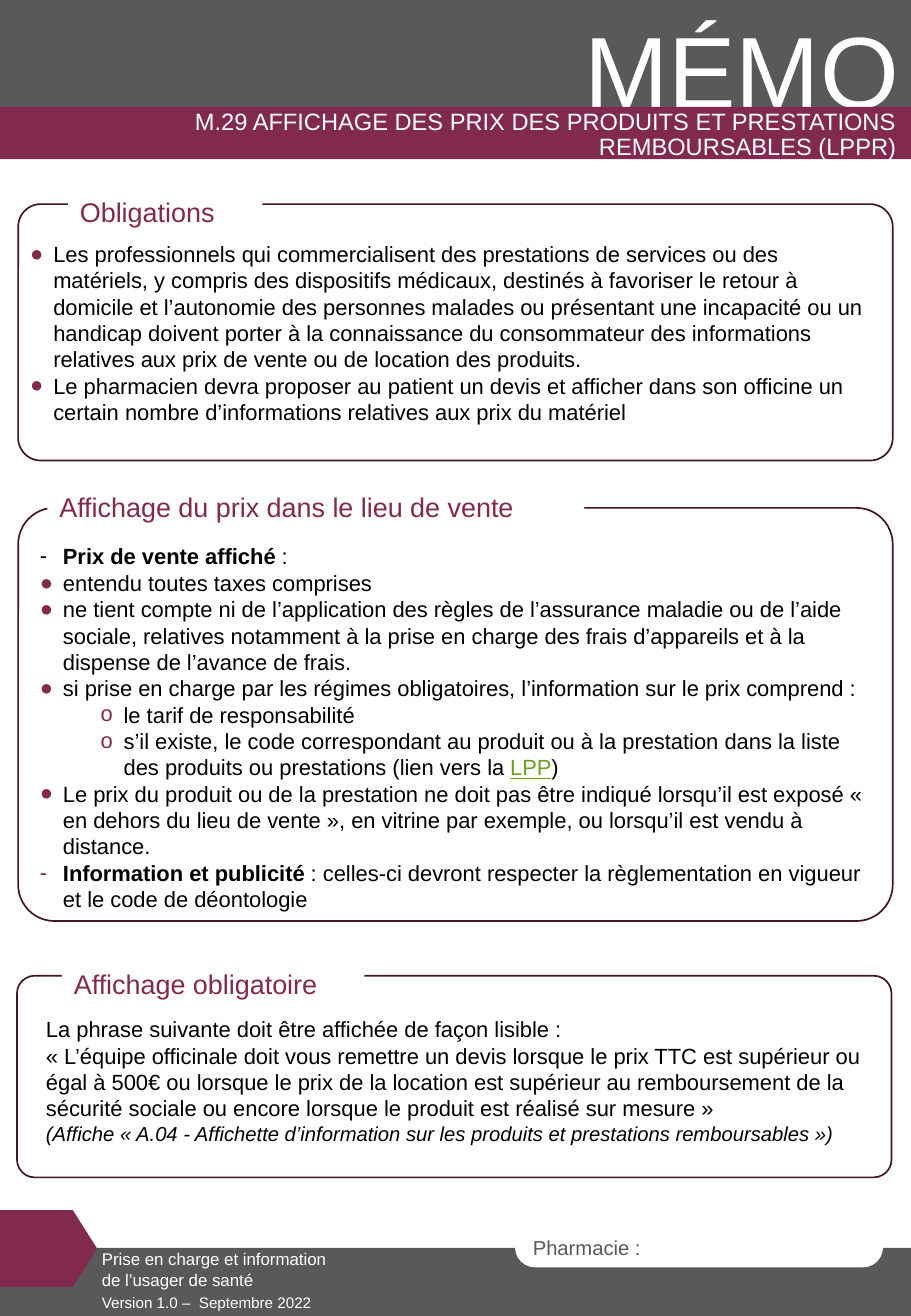
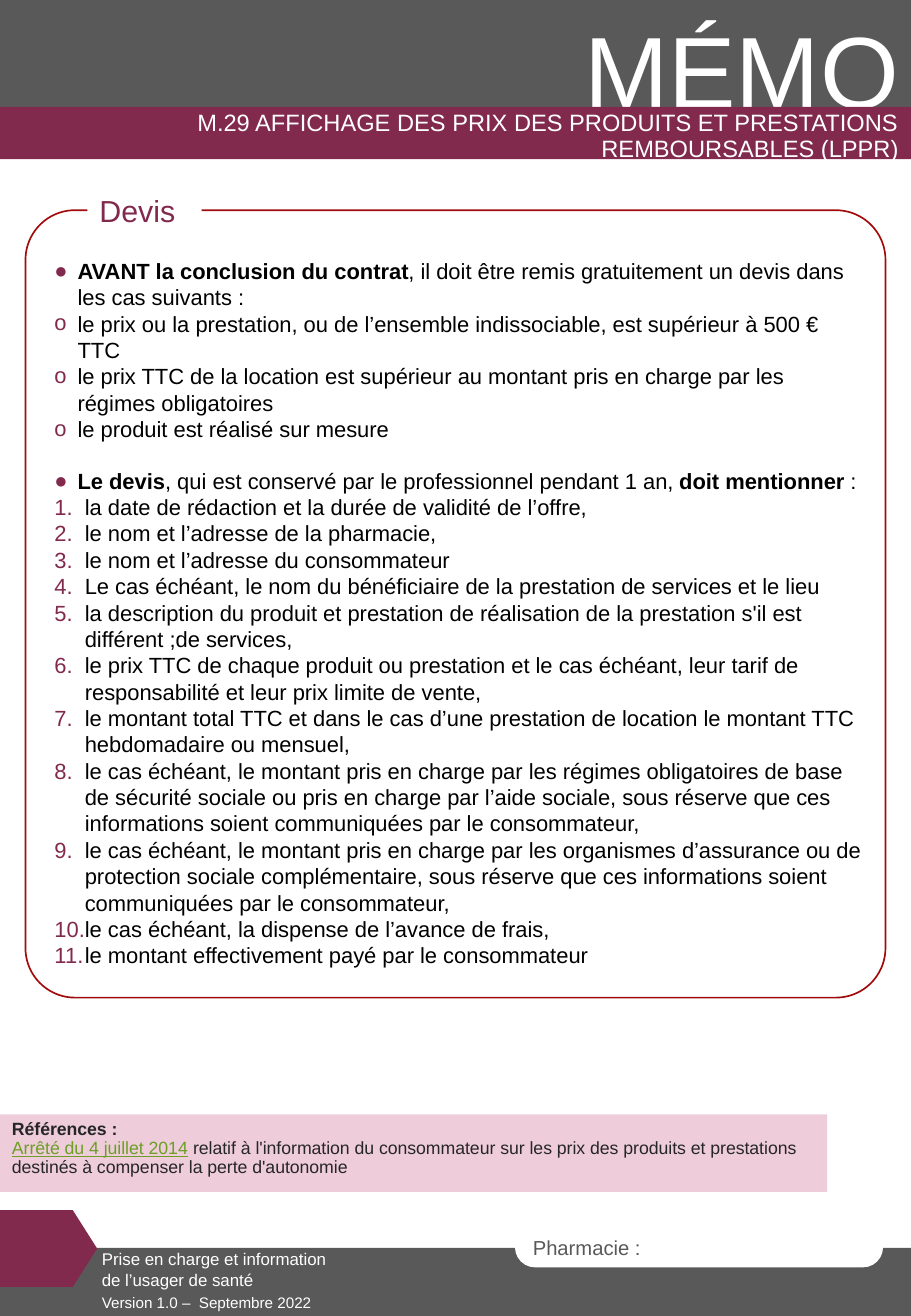
from lxml import etree
from pptx import Presentation
from pptx.dml.color import RGBColor
from pptx.enum import shapes, text
from pptx.oxml import ns
from pptx.util import Inches, Pt

PLUM = RGBColor(0x81, 0x2A, 0x4D)
DARK_PLUM = RGBColor(0x40, 0x15, 0x27)
RED = RGBColor(0xA1, 0x0B, 0x0B)
PINK = RGBColor(0xEE, 0xCC, 0xDA)
GREY = RGBColor(0x59, 0x59, 0x59)
INK = RGBColor(0x26, 0x26, 0x26)
GREEN = RGBColor(0x6B, 0x9F, 0x25)
BLACK = RGBColor(0, 0, 0)
WHITE = RGBColor(0xFF, 0xFF, 0xFF)

FONT = "Arial"
TITLE = "M.29 AFFICHAGE DES PRIX DES PRODUITS ET PRESTATIONS REMBOURSABLES (LPPR)"
RECT = shapes.MSO_SHAPE.RECTANGLE
ROUNDED = shapes.MSO_SHAPE.ROUNDED_RECTANGLE
PENTAGON = shapes.MSO_SHAPE.PENTAGON
RIGHT = text.PP_ALIGN.RIGHT

# List style: bullet tag, its attributes, left margin, hanging indent, bullet colour
LISTS = {
    "dot": ("buChar", {"char": "●"}, 0.19, 0.19, PLUM),
    "dash": ("buChar", {"char": "-"}, 0.19, 0.19, PLUM),
    "black dash": ("buChar", {"char": "-"}, 0.19, 0.19, BLACK),
    "ring": ("buChar", {"char": "o"}, 0.19, 0.19, PLUM),
    "inner ring": ("buChar", {"char": "o"}, 0.69, 0.19, PLUM),
    "number": ("buAutoNum", {"type": "arabicPeriod"}, 0.25, 0.25, PLUM),
}


def add_box(page, preset, at, fill=None, line=None, adjust=None):
    """Add a preset shape, or a text box when preset is None."""
    place = [Inches(length) for length in at]
    if preset is None:
        return page.shapes.add_textbox(*place)
    box = page.shapes.add_shape(preset, *place)
    box.shadow.inherit = False
    if adjust is not None:
        box.adjustments[0] = adjust
    if fill is None:
        box.fill.background()
    else:
        box.fill.solid()
        box.fill.fore_color.rgb = fill
    if line is None:
        box.line.fill.background()
    else:
        box.line.color.rgb = line
        box.line.width = Pt(1)
    return box


def write(box, paras, size, colour, align=text.PP_ALIGN.LEFT, spacing=None,
          anchor=text.MSO_ANCHOR.TOP, wrap=True):
    """Fill a box; a para is (list style, runs, gap before), a run is (text, marks).

    Marks: b bold, i italic at 12 points, u underlined green.
    """
    frame = box.text_frame
    frame.word_wrap = wrap
    frame.auto_size = text.MSO_AUTO_SIZE.NONE
    frame.vertical_anchor = anchor
    for index, (style, runs, gap) in enumerate(paras):
        para = frame.paragraphs[0] if index == 0 else frame.add_paragraph()
        if style:
            tag, attributes, margin, hanging, bullet_colour = LISTS[style]
            props = para._p.get_or_add_pPr()
            props.set("marL", str(Inches(margin)))
            props.set("indent", str(-Inches(hanging)))
            tint = etree.SubElement(props, ns.qn("a:buClr"))
            etree.SubElement(tint, ns.qn("a:srgbClr"), val=str(bullet_colour))
            etree.SubElement(props, ns.qn("a:buFont"), typeface=FONT)
            etree.SubElement(props, ns.qn("a:" + tag), attributes)
        para.alignment = align
        if spacing:
            para.line_spacing = spacing
        if gap:
            para.space_before = Pt(gap)
        for words, marks in runs:
            span = para.add_run()
            span.text = words
            span.font.name = FONT
            span.font.size = Pt(12 if "i" in marks else size)
            span.font.color.rgb = GREEN if "u" in marks else colour
            span.font.bold = "b" in marks
            span.font.italic = "i" in marks
            span.font.underline = "u" in marks


deck = Presentation()
deck.slide_width = Inches(7.5)
deck.slide_height = Inches(10.83)
layout = deck.slide_layouts[5]
for holder in list(layout.placeholders):
    if holder.placeholder_format.type != shapes.PP_PLACEHOLDER.TITLE:
        holder.element.getparent().remove(holder.element)
pages = [deck.slides.add_slide(layout) for _ in range(2)]

# Bands and footer: drawn once, then moved to the layout
first = pages[0]
header = add_box(first, RECT, (0, 0, 7.5, 0.88), GREY)
memo = add_box(first, None, (4.63, 0.01, 2.87, 1.11))
write(memo, [(None, [("MÉMO", "")], 0)], 60, WHITE, align=RIGHT, wrap=False)
title_band = add_box(first, RECT, (0, 0.88, 7.5, 0.43), PLUM)
footer = add_box(first, RECT, (0, 10.27, 7.5, 0.56), GREY)
pharmacy = add_box(first, ROUNDED, (4.24, 10.1, 3.03, 0.33), WHITE, adjust=0.5)
write(pharmacy, [(None, [("Pharmacie :", "")], 0)], 12, GREY,
      anchor=text.MSO_ANCHOR.MIDDLE)
arrow = add_box(first, PENTAGON, (0, 9.96, 0.8, 0.63), PLUM, adjust=0.317)
theme = add_box(first, None, (0.74, 10.23, 2.23, 0.43))
write(theme, [(None, [("Prise en charge et information de l’usager de santé", "")], 0)],
      10, WHITE)
version = add_box(first, None, (0.74, 10.59, 5.88, 0.25))
write(version, [(None, [("Version 1.0 –  Septembre 2022", "")], 0)], 9, WHITE)
for part in (header, memo, title_band, footer, pharmacy, arrow, theme, version):
    layout.shapes.element.append(part.element)

for page, top, width in zip(pages, (0.85, 0.86), (7.48, 7.5)):
    title = page.shapes.title
    title.left, title.top = Inches(0), Inches(top)
    title.width, title.height = Inches(width), Inches(0.53)
    write(title, [(None, [(TITLE, "")], 0)], 14, WHITE, align=RIGHT, spacing=0.9,
          anchor=text.MSO_ANCHOR.MIDDLE)

obligations = [
    ("dot", [("Les professionnels qui commercialisent des prestations de services ou des "
              "matériels, y compris des dispositifs médicaux, destinés à favoriser le "
              "retour à domicile et l’autonomie des personnes malades ou présentant une "
              "incapacité ou un handicap doivent porter à la connaissance du consommateur "
              "des informations relatives aux prix de vente ou de location des produits.",
              "")], 0),
    ("dot", [("Le pharmacien devra proposer au patient un devis et afficher dans son "
              "officine un certain nombre d’informations relatives aux prix du matériel",
              "")], 0),
]
price_display = [
    ("black dash", [("Prix de vente affiché ", "b"), (":", "")], 0),
    ("dot", [("entendu toutes taxes comprises", "")], 0),
    ("dot", [("ne tient compte ni de l’application des règles de l’assurance maladie ou "
              "de l’aide sociale, relatives notamment à la prise en charge des frais "
              "d’appareils et à la dispense de l’avance de frais.", "")], 0),
    ("dot", [("si prise en charge par les régimes obligatoires, l’information sur le prix "
              "comprend :", "")], 0),
    ("inner ring", [("le tarif de responsabilité", "")], 0),
    ("inner ring", [("s’il existe, le code correspondant au produit ou à la prestation "
                     "dans la liste des produits ou prestations (lien vers la ", ""),
                    ("LPP", "u"), (")", "")], 0),
    ("dot", [("Le prix du produit ou de la prestation ne doit pas être indiqué lorsqu’il "
              "est exposé « en dehors du lieu de vente », en vitrine par exemple, ou "
              "lorsqu’il est vendu à distance.", "")], 0),
    ("dash", [("Information et publicité ", "b"),
              (": celles-ci devront respecter la règlementation en vigueur et le code de "
               "déontologie", "")], 0),
]
required_notice = [
    (None, [("La phrase suivante doit être affichée de façon lisible :", "")], 0),
    (None, [("« L’équipe officinale doit vous remettre un devis lorsque le prix TTC est "
             "supérieur ou égal à 500€ ou lorsque le prix de la location est supérieur au "
             "remboursement de la sécurité sociale ou encore lorsque le produit est "
             "réalisé sur mesure »", "")], 0),
    (None, [("(Affiche « A.04 - Affichette d’information sur les produits et prestations "
             "remboursables »)", "i")], 0),
]
quote = [
    ("dot", [("AVANT la conclusion du contrat", "b"),
             (", il doit être remis gratuitement un devis dans les cas suivants :", "")], 0),
    ("ring", [("le prix ou la prestation, ou de l’ensemble indissociable, est supérieur à "
               "500 € TTC", "")], 0),
    ("ring", [("le prix TTC de la location est supérieur au montant pris en charge par "
               "les régimes obligatoires", "")], 0),
    ("ring", [("le produit est réalisé sur mesure", "")], 0),
    ("dot", [("Le devis", "b"),
             (", qui est conservé par le professionnel pendant 1 an, ", ""),
             ("doit mentionner ", "b"), (":", "")], 15),
]
quote_items = [
    "la date de rédaction et la durée de validité de l’offre,",
    "le nom et l’adresse de la pharmacie,",
    "le nom et l’adresse du consommateur",
    "Le cas échéant, le nom du bénéficiaire de la prestation de services et le lieu",
    "la description du produit et prestation de réalisation de la prestation s'il est "
    "différent ;de services,",
    "le prix TTC de chaque produit ou prestation et le cas échéant, leur tarif de "
    "responsabilité et leur prix limite de vente,",
    "le montant total TTC et dans le cas d’une prestation de location le montant TTC "
    "hebdomadaire ou mensuel,",
    "le cas échéant, le montant pris en charge par les régimes obligatoires de base de "
    "sécurité sociale ou pris en charge par l’aide sociale, sous réserve que ces "
    "informations soient communiquées par le consommateur,",
    "le cas échéant, le montant pris en charge par les organismes d’assurance ou de "
    "protection sociale complémentaire, sous réserve que ces informations soient "
    "communiquées par le consommateur,",
    "le cas échéant, la dispense de l’avance de frais,",
    "le montant effectivement payé par le consommateur",
]
quote += [("number", [(item, "")], 0) for item in quote_items]

# Page, frame (place, corner, line), label (text, place, size), body (paras, place)
sections = [
    (pages[0], (0.15, 1.68, 7.2, 2.11), 0.088, DARK_PLUM,
     "Obligations", (0.56, 1.56, 1.6, 0.37), 16,
     obligations, (0.15, 1.93, 7.12, 1.63)),
    (pages[0], (0.15, 4.18, 7.2, 3.4), 0.088, DARK_PLUM,
     "Affichage du prix dans le lieu de vente", (0.39, 3.99, 4.42, 0.37), 16,
     price_display, (0.23, 4.42, 7.04, 3.16)),
    (pages[0], (0.14, 8.03, 7.2, 1.66), 0.088, DARK_PLUM,
     "Affichage obligatoire", (0.51, 7.91, 2.49, 0.37), 16,
     required_notice, (0.28, 8.31, 6.91, 1.18)),
    (pages[1], (0.21, 1.73, 7.08, 6.48), 0.063, RED,
     "Devis", (0.72, 1.53, 0.94, 0.4), 18,
     quote, (0.35, 2.07, 6.85, 6.23)),
]
for (page, frame_at, corner, line, heading, label_at, label_size,
     paras, body_at) in sections:
    add_box(page, ROUNDED, frame_at, line=line, adjust=corner)
    label = add_box(page, RECT, label_at, WHITE)
    write(label, [(None, [(heading, "")], 0)], label_size, PLUM)
    write(add_box(page, None, body_at), paras, 13, BLACK)

references = add_box(pages[1], RECT, (0, 9.17, 6.81, 0.64), PINK)
write(references, [
    (None, [("Références :", "b")], 0),
    (None, [("Arrêté du 4 juillet 2014", "u"),
            (" relatif à l'information du consommateur sur les prix des produits et "
             "prestations destinés à compenser la perte d'autonomie", "")], 0),
], 10.5, INK, spacing=0.9)

deck.save("out.pptx")
